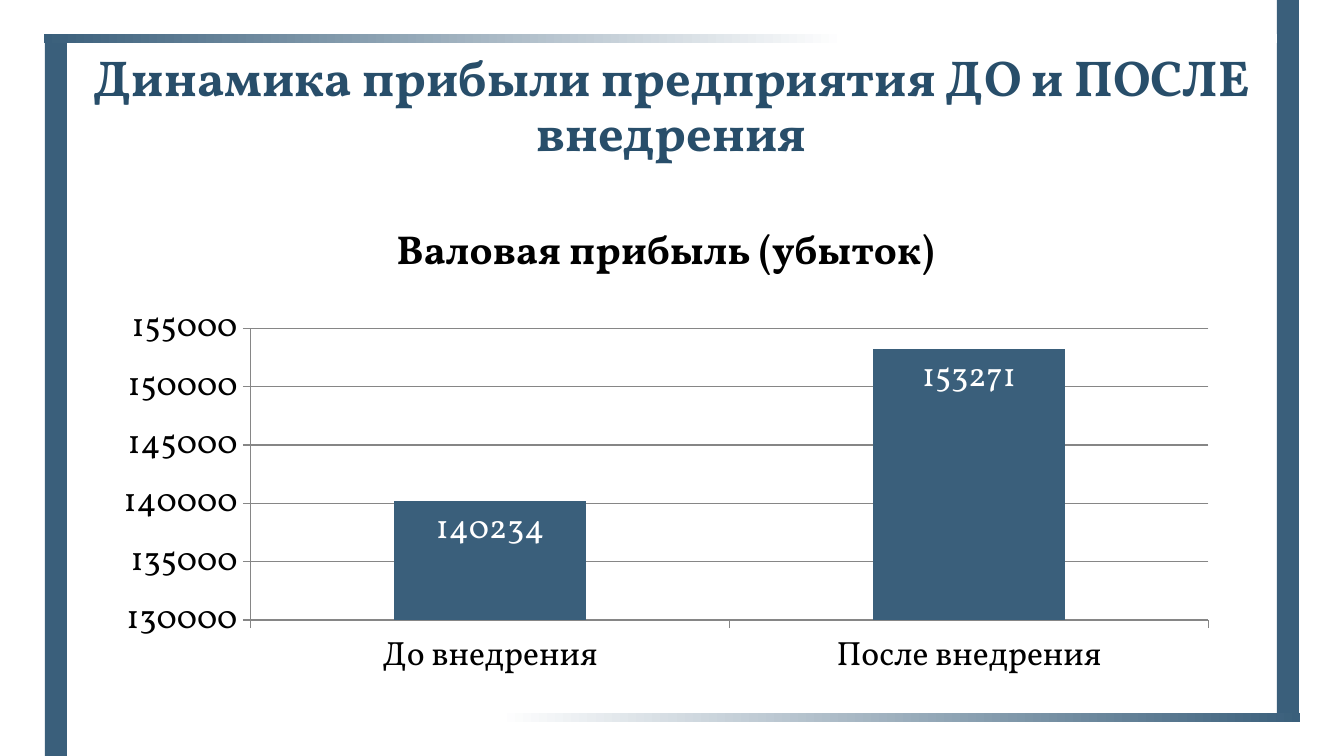
from pptx import Presentation
from pptx.chart.data import CategoryChartData
from pptx.dml.color import RGBColor
from pptx.enum.chart import XL_CHART_TYPE, XL_LABEL_POSITION, XL_TICK_MARK
from pptx.enum.shapes import MSO_SHAPE
from pptx.enum.text import MSO_ANCHOR, PP_ALIGN
from pptx.util import Pt

# Content
HEADING = "Динамика прибыли предприятия ДО и ПОСЛЕ внедрения"
PROFIT_NAME = "Валовая прибыль (убыток)"
PROFIT = {"До внедрения": 140234, "После внедрения": 153271}
AXIS_MIN, AXIS_MAX, AXIS_STEP = 130000, 155000, 5000

FONT = "Vollkorn"
STEEL = RGBColor(0x3A, 0x5F, 0x7B)
NAVY = RGBColor(0x28, 0x4E, 0x6A)
GREY = RGBColor(0x86, 0x86, 0x86)
BLACK = RGBColor(0, 0, 0)
WHITE = RGBColor(0xFF, 0xFF, 0xFF)

# Frame: left, top, width, height in px
POSTS = [(1277, 0, 22, 714), (45, 42, 22, 714)]
# Rails fade to white: box and gradient angle
RAILS = [((67, 713, 1233, 9), 180), ((44, 34, 1233, 9), 0)]
HEADING_BOX = (78, 51, 1187, 118)
CHART_BOX = (101, 196, 1130, 495)
SLIDE_SIZE = (1344, 756)


def px(*lengths):
    return [round(length * 914400 / 134.4) for length in lengths]


def style(font, size, color, bold=False):
    font.name, font.size, font.bold = FONT, Pt(size), bold
    font.color.rgb = color


prs = Presentation()
prs.slide_width, prs.slide_height = px(*SLIDE_SIZE)
slide = prs.slides.add_slide(prs.slide_layouts[5])


def add_bar(box):
    bar = slide.shapes.add_shape(MSO_SHAPE.RECTANGLE, *px(*box))
    bar.shadow.inherit = False
    bar.line.fill.background()
    return bar


# Frame
for box in POSTS:
    post = add_bar(box)
    post.fill.solid()
    post.fill.fore_color.rgb = STEEL
for box, angle in RAILS:
    rail = add_bar(box)
    rail.fill.gradient()
    rail.fill.gradient_angle = angle
    for stop, color, position in zip(rail.fill.gradient_stops, (STEEL, WHITE), (0, 0.65)):
        stop.color.rgb = color
        stop.position = position

# Heading
heading = slide.shapes.title
heading.left, heading.top, heading.width, heading.height = px(*HEADING_BOX)
heading.text_frame.vertical_anchor = MSO_ANCHOR.BOTTOM
heading.text_frame.word_wrap = True
heading_line = heading.text_frame.paragraphs[0]
heading_line.alignment = PP_ALIGN.CENTER
heading_line.line_spacing = 0.9
heading_run = heading_line.add_run()
heading_run.text = HEADING
style(heading_run.font, 27, NAVY, bold=True)

# Profit chart
profit_data = CategoryChartData()
profit_data.categories = list(PROFIT)
profit_data.add_series(PROFIT_NAME, list(PROFIT.values()))
chart = slide.shapes.add_chart(
    XL_CHART_TYPE.COLUMN_STACKED, *px(*CHART_BOX), profit_data).chart
style(chart.font, 18, BLACK)
chart.has_legend = False
chart.has_title = True
chart_title_run = chart.chart_title.text_frame.paragraphs[0].add_run()
chart_title_run.text = PROFIT_NAME
style(chart_title_run.font, 21.6, BLACK, bold=True)
chart.chart_title.include_in_layout = False

# Axes
value_axis = chart.value_axis
value_axis.minimum_scale, value_axis.maximum_scale = AXIS_MIN, AXIS_MAX
value_axis.major_unit = AXIS_STEP
value_axis.has_major_gridlines = True
for axis in (value_axis, chart.category_axis):
    axis.major_tick_mark = XL_TICK_MARK.OUTSIDE
    axis.minor_tick_mark = XL_TICK_MARK.NONE
for line in (value_axis.format.line, chart.category_axis.format.line,
             value_axis.major_gridlines.format.line):
    line.color.rgb = GREY
    line.width = Pt(0.75)

# Columns and their labels
plot = chart.plots[0]
plot.gap_width, plot.overlap = 150, 100
plot.vary_by_categories = False
columns = plot.series[0]
columns.format.fill.solid()
columns.format.fill.fore_color.rgb = STEEL
labels = columns.data_labels
labels.show_value = True
labels.position = XL_LABEL_POSITION.INSIDE_END
style(labels.font, 18, WHITE)

prs.save("out.pptx")
